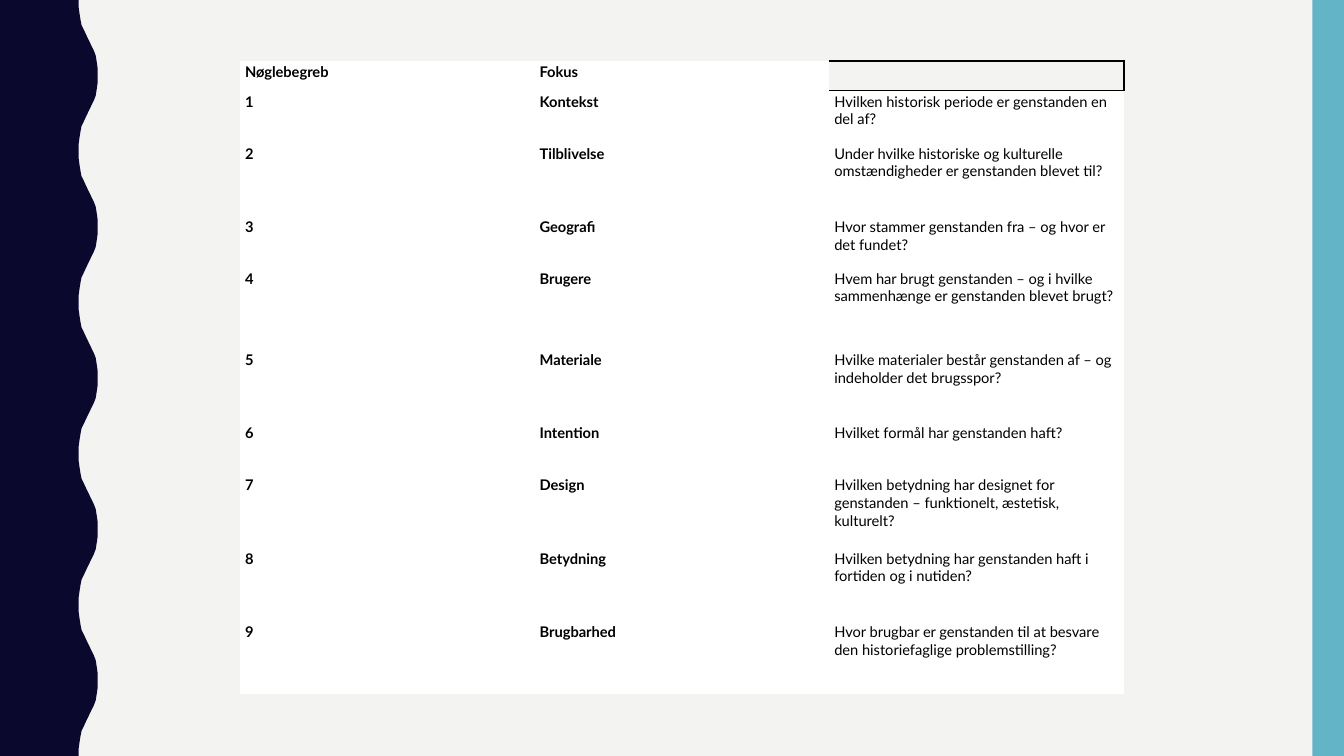
from lxml import etree
from pptx import Presentation
from pptx import util as u
from pptx.dml import color
from pptx.enum import shapes
from pptx.oxml import ns

WIDTH, HEIGHT = 960, 540
HEAD = ("Nøglebegreb", "Fokus", "")
FOCUS = (
    ("Kontekst", "Hvilken historisk periode er genstanden en del af?", 37),
    ("Tilblivelse", "Under hvilke historiske og kulturelle omstændigheder er genstanden blevet til?", 52.5),
    ("Geografi", "Hvor stammer genstanden fra – og hvor er det fundet?", 37),
    ("Brugere", "Hvem har brugt genstanden – og i hvilke sammenhænge er genstanden blevet brugt?", 58),
    ("Materiale", "Hvilke materialer består genstanden af – og indeholder det brugsspor?", 52.5),
    ("Intention", "Hvilket formål har genstanden haft?", 37),
    ("Design", "Hvilken betydning har designet for genstanden – funktionelt, æstetisk, kulturelt?", 52.5),
    ("Betydning", "Hvilken betydning har genstanden haft i fortiden og i nutiden?", 52.5),
    ("Brugbarhed", "Hvor brugbar er genstanden til at besvare den historiefaglige problemstilling?", 52.5),
)
RISE = ((56.2, 0), (56.2, 5), (56.9, 10), (57.6, 14.4), (58.3, 18), (59.8, 21),
        (61.2, 24), (62.6, 27), (64.1, 30), (65.5, 33), (67, 36), (68.4, 39.6),
        (69.1, 44), (69.8, 49), (69.8, 54))


def rgb(code):
    return color.RGBColor.from_string(code)


class Page:
    """Draws styled elements on one slide."""

    font, size, ink, paper = "Lato", 10.5, "000000", "FFFFFF"

    def __init__(self, deck, back):
        self.slide = deck.slides.add_slide(deck.slide_layouts[6])
        fill = self.slide.background.fill
        fill.solid()
        fill.fore_color.rgb = rgb(back)

    def paint(self, shape, code):
        shape.shadow.inherit = False
        shape.fill.solid()
        shape.fill.fore_color.rgb = rgb(code)
        shape.line.fill.background()

    def bar(self, left, top, width, height, code):
        box = [u.Pt(n) for n in (left, top, width, height)]
        self.paint(self.slide.shapes.add_shape(shapes.MSO_SHAPE.RECTANGLE, *box), code)

    def wave(self, rise, code):
        step = rise[-1][1]
        fall = [(x, 2 * step - y) for x, y in rise[-2::-1]]
        cycle = list(rise) + fall[:-1]
        points = [(x, y + top) for top in range(0, HEIGHT, 2 * step) for x, y in cycle]
        points += [(rise[0][0], HEIGHT), (0, HEIGHT)]
        form = self.slide.shapes.build_freeform(0, 0)
        form.add_line_segments([(u.Pt(x), u.Pt(y)) for x, y in points])
        self.paint(form.convert_to_shape(), code)

    def edges(self, cell, sides):
        props = cell._tc.get_or_add_tcPr()
        for spot, side in enumerate("LRTB"):
            line = etree.Element(ns.qn("a:ln" + side), w=str(u.Pt(1)))
            if side in sides:
                fill = etree.SubElement(line, ns.qn("a:solidFill"))
                etree.SubElement(fill, ns.qn("a:srgbClr"), val=self.ink)
            else:
                etree.SubElement(line, ns.qn("a:noFill"))
            props.insert(spot, line)

    def cell(self, cell, words, bold, sides):
        cell.margin_left = cell.margin_right = u.Pt(3.6)
        cell.margin_top = cell.margin_bottom = u.Pt(1.8)
        para = cell.text_frame.paragraphs[0]
        if words:
            cell.fill.solid()
            cell.fill.fore_color.rgb = rgb(self.paper)
            run = para.add_run()
            run.text = words
            run.font.name, run.font.size, run.font.bold = self.font, u.Pt(self.size), bold
            run.font.color.rgb = rgb(self.ink)
        else:
            cell.fill.background()
            etree.SubElement(para._p, ns.qn("a:endParaRPr"), sz=str(int(self.size * 100)))
        self.edges(cell, sides)

    def table(self, left, top, width, rows, highs):
        cols = len(rows[0])
        box = [u.Pt(n) for n in (left, top, width, sum(highs))]
        table = self.slide.shapes.add_table(len(rows), cols, *box).table
        table.first_row = table.horz_banding = False
        for col in table.columns:
            col.width = u.Pt(width / cols)
        for r, (row, high) in enumerate(zip(rows, highs)):
            table.rows[r].height = u.Pt(high)
            for c, words in enumerate(row):
                above = r > 0 and not rows[r - 1][c]
                sides = "T" if above else "" if words else "RTB"
                self.cell(table.cell(r, c), words, r == 0 or c < 2, sides)


def main():
    deck = Presentation()
    deck.slide_width, deck.slide_height = u.Pt(WIDTH), u.Pt(HEIGHT)
    page = Page(deck, "F3F3F2")
    page.wave(RISE, "0B082E")
    page.bar(937.5, 0, 22.5, HEIGHT, "62B4C6")
    rows = [HEAD] + [(str(n), key, ask) for n, (key, ask, _) in enumerate(FOCUS, 1)]
    page.table(171.4, 43.6, 631.5, rows, [20.9] + [high for _, _, high in FOCUS])
    deck.save("out.pptx")


if __name__ == "__main__":
    main()
